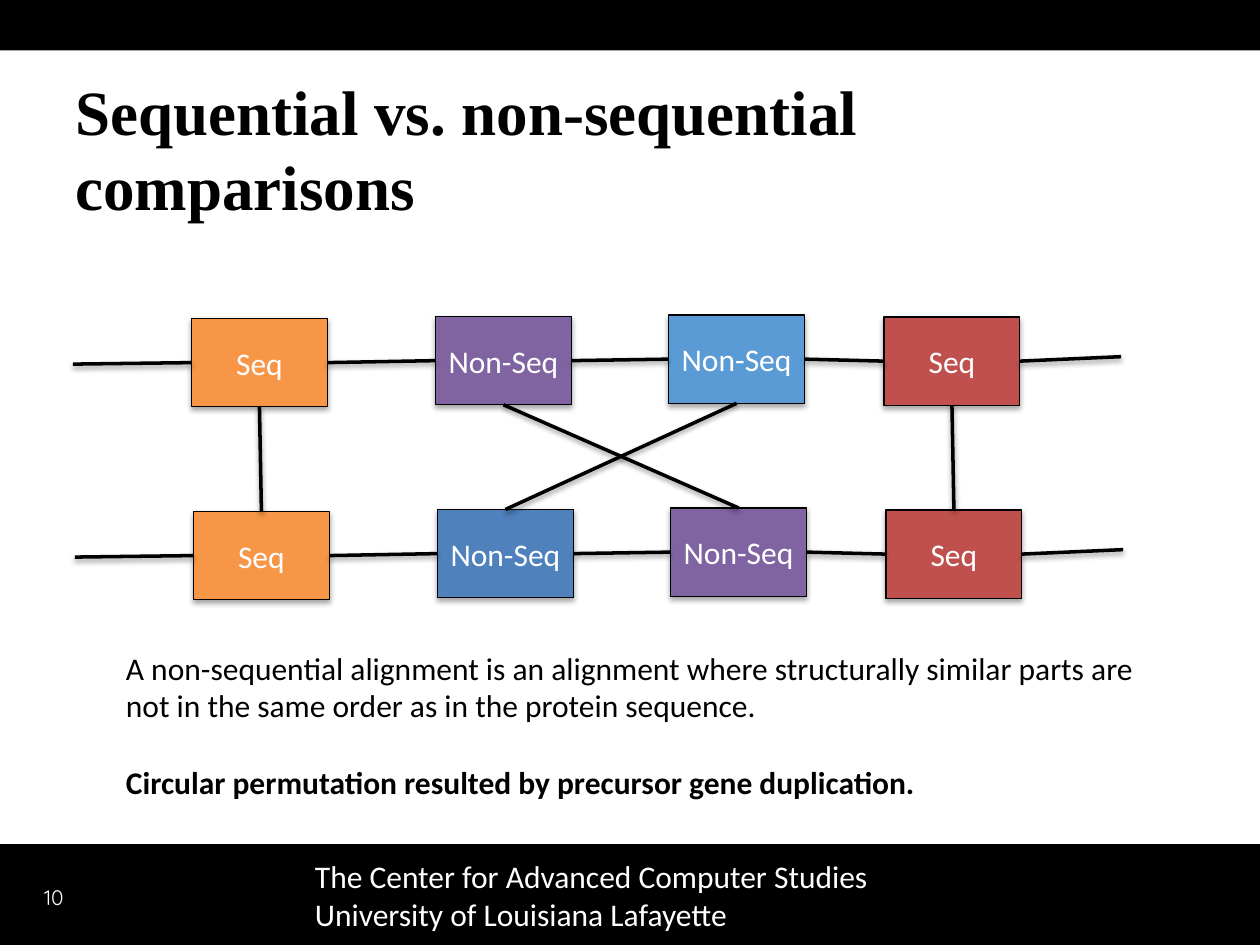
import dataclasses
import typing

import pptx
import pptx.dml.color
import pptx.enum.shapes
import pptx.enum.text
import pptx.oxml
import pptx.oxml.ns
import pptx.util

Cm = pptx.util.Cm
Pt = pptx.util.Pt

COLORS = {
    "black": "000000",
    "white": "FFFFFF",
    "orange": "F79646",
    "purple": "8064A2",
    "light_blue": "5B9BD5",
    "blue": "4F81BD",
    "red": "C0504D",
}
BLOCK_WIDTH, BLOCK_HEIGHT = 2.74, 1.78
BLOCK_CORNERS = [(3.86, 6.42), (8.78, 6.38), (13.48, 6.35), (17.82, 6.39)]
LEFT_TIP, RIGHT_TIP = (1.47, 7.34), (22.6, 7.19)
TOP, LEFT, BOTTOM, RIGHT = range(4)  # connection sites of a rectangle


@dataclasses.dataclass(frozen=True)
class Block:
    label: str
    color: str


@dataclasses.dataclass(frozen=True)
class Chain:
    dx: float
    dy: float
    blocks: tuple[Block, ...]


@dataclasses.dataclass(frozen=True)
class Shadow:
    opacity: int
    blur: float
    distance: float


BLOCK_SHADOW = Shadow(35, 3.1, 1.8)
LINE_SHADOW = Shadow(38, 3.1, 1.6)
CHAINS = (
    Chain(0, 0, (Block("Seq", "orange"), Block("Non-Seq", "purple"),
                 Block("Non-Seq", "light_blue"), Block("Seq", "red"))),
    Chain(0.04, 3.89, (Block("Seq", "orange"), Block("Non-Seq", "blue"),
                       Block("Non-Seq", "purple"), Block("Seq", "red"))),
)
ALIGNED_PAIRS = [(0, 0), (3, 3), (1, 2), (2, 1)]


def rgb(color: str) -> pptx.dml.color.RGBColor:
    return pptx.dml.color.RGBColor.from_string(COLORS[color])


def cast_shadow(shape: typing.Any, shadow: Shadow) -> None:
    """Add a downward shadow; call it after the fill and line are set."""
    shape.element.spPr.append(pptx.oxml.parse_xml(
        f'<a:effectLst {pptx.oxml.ns.nsdecls("a")}>'
        f'<a:outerShdw blurRad="{Pt(shadow.blur)}" dist="{Pt(shadow.distance)}" '
        'dir="5400000" rotWithShape="0">'
        f'<a:srgbClr val="{COLORS["black"]}"><a:alpha val="{shadow.opacity * 1000}"/></a:srgbClr>'
        '</a:outerShdw></a:effectLst>'))


def style_text(paragraph: typing.Any, size: float, color: str,
               name: str = "Calibri", bold: bool = False) -> None:
    paragraph.font.size = Pt(size)
    paragraph.font.name = name
    paragraph.font.bold = bold
    paragraph.font.color.rgb = rgb(color)


def add_text(slide: typing.Any, left: float, top: float, width: float, height: float,
             lines: list[str], size: float, color: str,
             name: str = "Calibri", bold: bool = False) -> typing.Any:
    frame = slide.shapes.add_textbox(Cm(left), Cm(top), Cm(width), Cm(height)).text_frame
    frame.word_wrap = True
    frame.text = "\n".join(lines)
    for paragraph in frame.paragraphs:
        style_text(paragraph, size, color, name, bold)
    return frame


def add_band(slide: typing.Any, top: float, height: float) -> None:
    band = slide.shapes.add_shape(pptx.enum.shapes.MSO_SHAPE.RECTANGLE,
                                  0, Cm(top), Cm(25.4), Cm(height))
    band.fill.solid()
    band.fill.fore_color.rgb = rgb("black")
    band.line.fill.background()
    band.shadow.inherit = False


def add_block(slide: typing.Any, block: Block, left: float, top: float) -> typing.Any:
    shape = slide.shapes.add_shape(pptx.enum.shapes.MSO_SHAPE.RECTANGLE, Cm(left), Cm(top),
                                   Cm(BLOCK_WIDTH), Cm(BLOCK_HEIGHT))
    shape.fill.solid()
    shape.fill.fore_color.rgb = rgb(block.color)
    shape.line.color.rgb = rgb("black")
    shape.line.width = Pt(0.75)
    cast_shadow(shape, BLOCK_SHADOW)
    frame = shape.text_frame
    frame.margin_left = frame.margin_right = 0
    frame.vertical_anchor = pptx.enum.text.MSO_ANCHOR.MIDDLE
    frame.text = block.label
    frame.paragraphs[0].alignment = pptx.enum.text.PP_ALIGN.CENTER
    style_text(frame.paragraphs[0], 18, "white")
    return shape


def add_link(slide: typing.Any, start: typing.Any, start_site: int,
             end: typing.Any = None, end_site: int = 0,
             tip: tuple[float, float] = (0, 0)) -> None:
    """Draw a line from a block to another block, or to a free tip."""
    link = slide.shapes.add_connector(pptx.enum.shapes.MSO_CONNECTOR.STRAIGHT,
                                      0, 0, Cm(tip[0]), Cm(tip[1]))
    link.begin_connect(start, start_site)
    if end is not None:
        link.end_connect(end, end_site)
    link.line.color.rgb = rgb("black")
    link.line.width = Pt(2)
    cast_shadow(link, LINE_SHADOW)


def add_chain(slide: typing.Any, chain: Chain) -> list[typing.Any]:
    shapes = [add_block(slide, block, left + chain.dx, top + chain.dy)
              for block, (left, top) in zip(chain.blocks, BLOCK_CORNERS)]
    for before, after in zip(shapes, shapes[1:]):
        add_link(slide, before, RIGHT, after, LEFT)
    for shape, site, (x, y) in ((shapes[-1], RIGHT, RIGHT_TIP), (shapes[0], LEFT, LEFT_TIP)):
        add_link(slide, shape, site, tip=(x + chain.dx, y + chain.dy))
    return shapes


def main() -> None:
    presentation = pptx.Presentation()
    presentation.slide_width, presentation.slide_height = Cm(25.4), Cm(19.05)
    slide = presentation.slides.add_slide(presentation.slide_layouts[6])

    add_band(slide, 0, 1.02)
    add_band(slide, 17.02, 2.03)
    title = add_text(slide, 1.27, 1.27, 22.86, 2.67,
                     ["Sequential vs. non-sequential comparisons"],
                     36, "black", "Times New Roman", True)
    title.margin_top = Cm(0.2)
    title.paragraphs[0].line_spacing = Pt(42.9)

    upper, lower = [add_chain(slide, chain) for chain in CHAINS]
    for above, below in ALIGNED_PAIRS:
        add_link(slide, upper[above], BOTTOM, lower[below], TOP)

    explanation = add_text(
        slide, 2.29, 12.95, 21.62, 3.33,
        ["A non-sequential alignment is an alignment where structurally similar parts are "
         "not in the same order as in the protein sequence.",
         "Circular permutation resulted by precursor gene duplication."], 18, "black")
    explanation.paragraphs[1].space_before = Pt(22)
    explanation.paragraphs[1].font.bold = True

    slide_number = add_text(slide, 0.64, 17.58, 5.72, 1.02, ["10"], 12, "white", "Quicksand")
    slide_number.vertical_anchor = pptx.enum.text.MSO_ANCHOR.MIDDLE
    add_text(slide, 6.1, 17.15, 12.75, 1.9,
             ["The Center for Advanced Computer Studies",
              "University of Louisiana Lafayette"], 18, "white")
    presentation.save("out.pptx")


if __name__ == "__main__":
    main()
